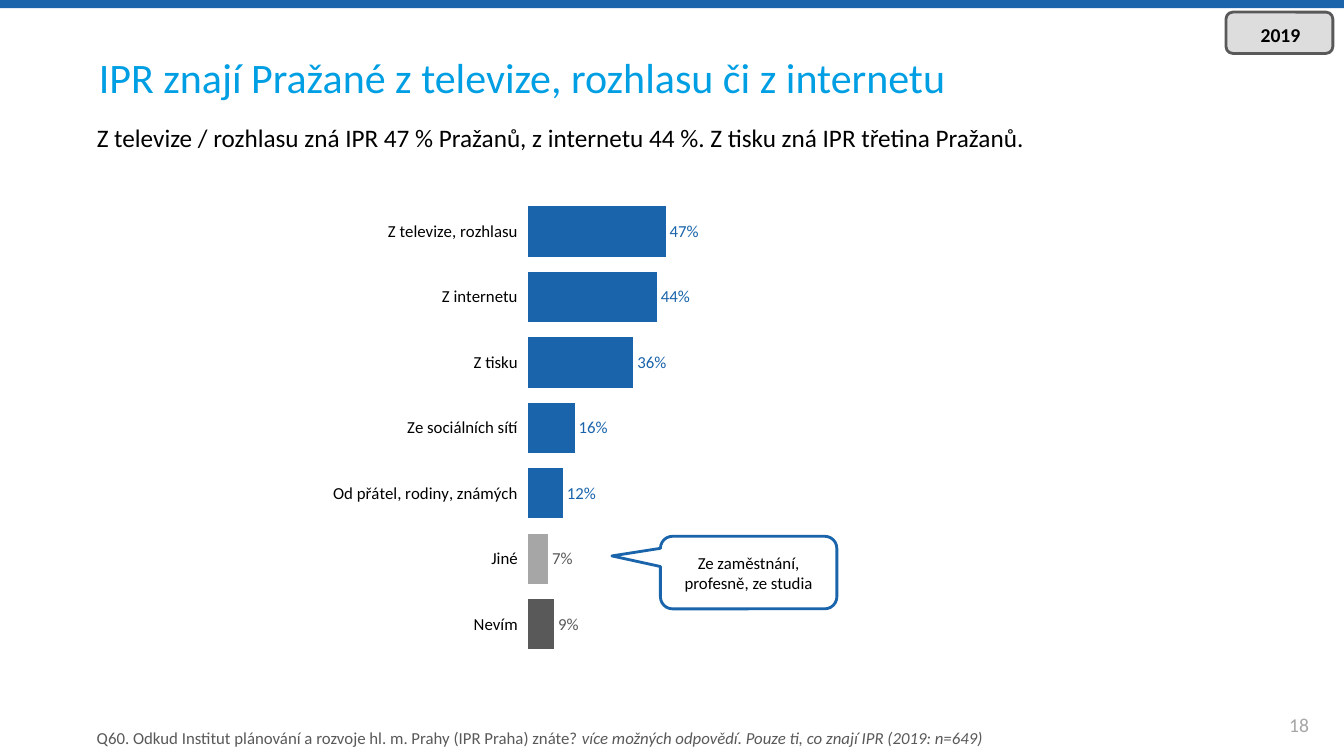
from dataclasses import dataclass

from lxml.etree import SubElement
from pptx import Presentation
from pptx.chart.data import CategoryChartData
from pptx.dml.color import RGBColor
from pptx.enum.chart import XL_CHART_TYPE, XL_LABEL_POSITION, XL_TICK_LABEL_POSITION, XL_TICK_MARK
from pptx.enum.shapes import MSO_SHAPE
from pptx.enum.text import MSO_ANCHOR, MSO_AUTO_SIZE, PP_ALIGN
from pptx.oxml import parse_xml
from pptx.oxml.ns import nsdecls, qn
from pptx.util import Inches, Pt

BLUE = RGBColor(0x19, 0x64, 0xAA)
CYAN = RGBColor(0x00, 0x9F, 0xE3)
BLACK = RGBColor(0x00, 0x00, 0x00)
DARK = RGBColor(0x59, 0x59, 0x59)
GREY = RGBColor(0xA6, 0xA6, 0xA6)
FONT = "Calibri"


@dataclass
class Style:
    size: float
    color: RGBColor = BLACK
    bold: bool = False
    align: PP_ALIGN = PP_ALIGN.LEFT
    anchor: MSO_ANCHOR = MSO_ANCHOR.MIDDLE
    insets: tuple = (0.1, 0.05, 0.1, 0.05)


@dataclass
class Source:
    label: str
    share: float
    fill: RGBColor = BLUE
    text: RGBColor = BLUE


SOURCES = [
    Source("Z televize, rozhlasu", 0.47),
    Source("Z internetu", 0.44),
    Source("Z tisku", 0.36),
    Source("Ze sociálních sítí", 0.16),
    Source("Od přátel, rodiny, známých", 0.12),
    Source("Jiné", 0.07, GREY, DARK),
    Source("Nevím", 0.09, DARK, DARK),
]


def place(s, box: tuple) -> None:
    s.left, s.top, s.width, s.height = map(Inches, box)


def style_font(font, size: float, color: RGBColor) -> None:
    font.name, font.size = FONT, Pt(size)
    font.color.rgb = color


def write(s, style: Style, *runs: str, last_italic: bool = False) -> None:
    tf = s.text_frame
    tf.word_wrap = True
    tf.auto_size = MSO_AUTO_SIZE.NONE
    tf.vertical_anchor = style.anchor
    tf.margin_left, tf.margin_top, tf.margin_right, tf.margin_bottom = map(Inches, style.insets)
    p = tf.paragraphs[0]
    p.alignment = style.align
    p.space_before = Pt(0)
    for text in runs:
        r = p.add_run()
        r.text = text
        style_font(r.font, style.size, style.color)
        r.font.bold = style.bold
    if last_italic:
        r.font.italic = True


def add_outline(shapes, kind: MSO_SHAPE, box: tuple, line: RGBColor | None = None,
                fill: RGBColor | None = None, alpha: int = 100):
    s = shapes.add_shape(kind, *map(Inches, box))
    s.shadow.inherit = False
    if fill is None:
        s.fill.background()
    else:
        s.fill.solid()
        s.fill.fore_color.rgb = fill
        if alpha < 100:
            color = s.fill._xPr.find(".//" + qn("a:srgbClr"))
            SubElement(color, qn("a:alpha")).set("val", str(alpha * 1000))
    if line is None:
        s.line.fill.background()
    else:
        s.line.color.rgb = line
        s.line.width = Pt(2)
    return s


def add_source_chart(shapes, box: tuple) -> None:
    data = CategoryChartData(number_format="0%")
    data.categories = [source.label for source in SOURCES]
    data.add_series("Series 1", [source.share for source in SOURCES])
    chart = shapes.add_chart(XL_CHART_TYPE.BAR_CLUSTERED, *map(Inches, box), data).chart
    chart.has_legend = chart.has_title = False
    style_font(chart.font, 10.5, BLACK)
    cat, val = chart.category_axis, chart.value_axis
    cat.reverse_order = True
    cat.major_tick_mark = XL_TICK_MARK.OUTSIDE
    cat.tick_label_position = XL_TICK_LABEL_POSITION.LOW
    cat.format.line.fill.background()
    style_font(cat.tick_labels.font, 12, BLACK)
    val.minimum_scale, val.maximum_scale = 0, 1
    val.has_major_gridlines = val.visible = False

    plot = chart.plots[0]
    plot.gap_width = 30
    plot.vary_by_categories = False
    series = plot.series[0]
    series.format.fill.solid()
    series.format.fill.fore_color.rgb = BLUE
    labels = series.data_labels
    labels.show_value = True
    labels.number_format, labels.number_format_is_linked = "0%;;", False
    labels.position = XL_LABEL_POSITION.OUTSIDE_END
    style_font(labels.font, 12, BLUE)
    for i, source in enumerate(SOURCES):
        if source.fill != BLUE:
            point = series.points[i]
            point.format.fill.solid()
            point.format.fill.fore_color.rgb = source.fill
            style_font(point.data_label.font, 12, source.text)
            point.data_label.position = XL_LABEL_POSITION.OUTSIDE_END

    area = chart._chartSpace.chart.plotArea
    for old in area.findall(qn("c:layout")):
        area.remove(old)
    edges = "".join(f'<c:{tag} val="{value}"/>' for tag, value in (
        ("layoutTarget", "inner"), ("xMode", "edge"), ("yMode", "edge"),
        ("x", 0.437), ("y", 0.031), ("w", 0.563), ("h", 0.924)))
    area.insert(0, parse_xml(
        f'<c:layout {nsdecls("c")}><c:manualLayout>{edges}</c:manualLayout></c:layout>'))


def main() -> None:
    """Build the slide on where Praguers know IPR from."""
    prs = Presentation()
    prs.slide_width, prs.slide_height = Inches(13.33), Inches(7.5)
    slide = prs.slides.add_slide(prs.slide_layouts[1])
    shapes = slide.shapes
    add_outline(shapes, MSO_SHAPE.RECTANGLE, (0, 0, 13.33, 0.08), fill=BLUE)

    title, body = shapes.title, slide.placeholders[1]
    place(title, (0, 0.45, 13.33, 0.63))
    write(title, Style(30, CYAN, insets=(0.98, 0, 0, 0)),
          "IPR znají Pražané z televize, rozhlasu či z internetu")
    place(body, (-0.02, 1.21, 13.33, 0.72))
    pPr = body.text_frame.paragraphs[0]._p.get_or_add_pPr()
    pPr.set("marL", "0")
    pPr.set("indent", "0")
    SubElement(pPr, qn("a:buNone"))
    write(body, Style(18, anchor=MSO_ANCHOR.TOP, insets=(0.98, 0, 0.98, 0)),
          "Z televize / rozhlasu zná IPR 47 % Pražanů, z internetu 44 %. "
          "Z tisku zná IPR třetina Pražanů.")

    number = shapes.add_textbox(*map(Inches, (12.44, 6.99, 0.89, 0.4)))
    write(number, Style(14, GREY, align=PP_ALIGN.CENTER), "18")
    question = shapes.add_textbox(*map(Inches, (0.96, 7.15, 10.06, 0.33)))
    write(question, Style(12, DARK, insets=(0, 0, 0, 0)),
          "Q60. Odkud Institut plánování a rozvoje hl. m. Prahy (IPR Praha) znáte? ",
          "více možných odpovědí. Pouze ti, co znají IPR (2019: n=649)", last_italic=True)

    add_source_chart(shapes, (2.97, 1.82, 5.18, 4.92))

    callout = add_outline(shapes, MSO_SHAPE.ROUNDED_RECTANGULAR_CALLOUT,
                          (6.55, 5.32, 1.75, 0.72), BLUE)
    for i, value in enumerate((-0.775, -0.229, 0.167)):
        callout.adjustments[i] = value
    write(callout, Style(12, align=PP_ALIGN.CENTER), "Ze zaměstnání, profesně, ze studia")

    badge = shapes.add_group_shape().shapes
    add_outline(badge, MSO_SHAPE.ROUNDED_RECTANGLE, (12.16, 0.12, 1.06, 0.41), DARK, DARK, 20)
    year = add_outline(badge, MSO_SHAPE.ROUNDED_RECTANGLE, (12.19, 0.16, 1.02, 0.37))
    write(year, Style(14, bold=True, align=PP_ALIGN.CENTER), "2019")
    prs.save("out.pptx")


if __name__ == "__main__":
    main()
